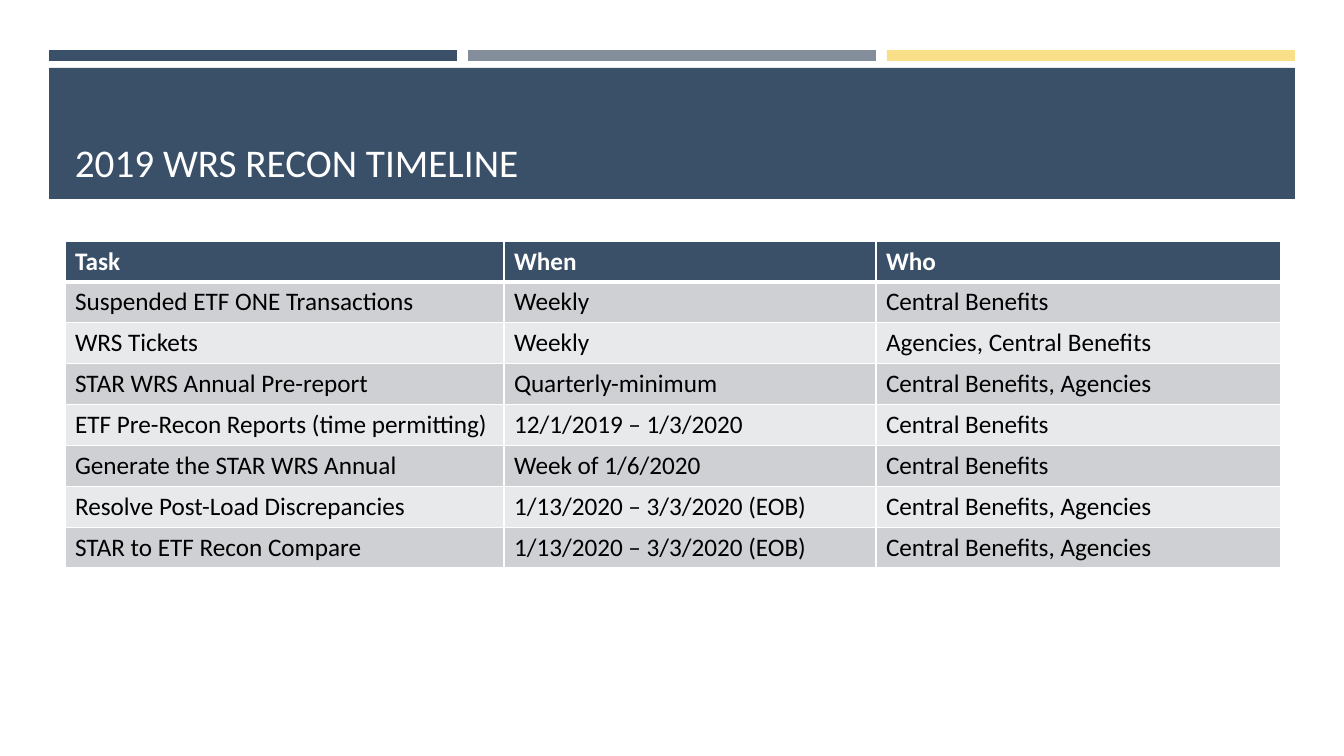
from lxml import etree
from pptx import Presentation
from pptx.dml.color import RGBColor
from pptx.enum import shapes, text
from pptx.oxml.ns import qn
from pptx.util import Emu, Pt

TITLE = "2019 WRS RECON TIMELINE"
ROWS = [
    ("Task", "When", "Who"),
    ("Suspended ETF ONE Transactions", "Weekly", "Central Benefits"),
    ("WRS Tickets", "Weekly", "Agencies, Central Benefits"),
    ("STAR WRS Annual Pre-report", "Quarterly-minimum", "Central Benefits, Agencies"),
    ("ETF Pre-Recon Reports (time permitting)", "12/1/2019 – 1/3/2020", "Central Benefits"),
    ("Generate the STAR WRS Annual", "Week of 1/6/2020", "Central Benefits"),
    ("Resolve Post-Load Discrepancies", "1/13/2020 – 3/3/2020 (EOB)", "Central Benefits, Agencies"),
    ("STAR to ETF Recon Compare", "1/13/2020 – 3/3/2020 (EOB)", "Central Benefits, Agencies"),
]
COLS = (439, 372, 405)
TABLE_H = 327

NAVY = RGBColor(0x3A, 0x50, 0x68)
SLATE = RGBColor(0x84, 0x8D, 0x9A)
GOLD = RGBColor(0xF8, 0xDF, 0x88)
DARK = RGBColor(0xCE, 0xD0, 0xD4)
LIGHT = RGBColor(0xE8, 0xE9, 0xEB)
WHITE = RGBColor(0xFF, 0xFF, 0xFF)
BLACK = RGBColor(0, 0, 0)
FONT = "Calibri"


def px(n):
    return Emu(round(n * 914400 / 100.8))


def block(slide, x, y, w, h, color):
    shape = slide.shapes.add_shape(shapes.MSO_SHAPE.RECTANGLE, px(x), px(y), px(w), px(h))
    shape.shadow.inherit = False
    shape.fill.solid()
    shape.fill.fore_color.rgb = color
    shape.line.fill.background()
    return shape


def style(para, size, color, bold=False):
    font = para.font
    font.name, font.size, font.bold = FONT, Pt(size), bold
    font.color.rgb = color


def edge(cell, side, width):
    """Draw one white border; call before the cell is filled."""
    line = etree.SubElement(cell._tc.get_or_add_tcPr(), qn("a:ln" + side), w=str(Pt(width)))
    fill = etree.SubElement(line, qn("a:solidFill"))
    etree.SubElement(fill, qn("a:srgbClr"), val=str(WHITE))


def header(slide):
    for i, color in enumerate((NAVY, SLATE, GOLD)):
        block(slide, 49 + 419 * i, 50, 408, 11, color)
    block(slide, 49, 68, 1246, 131, NAVY)
    title = block(slide, 65, 78, 1215, 112, NAVY)
    frame = title.text_frame
    frame.word_wrap = True
    frame.vertical_anchor = text.MSO_ANCHOR.BOTTOM
    para = frame.paragraphs[0]
    para.text = TITLE
    para.alignment = text.PP_ALIGN.LEFT
    style(para, 28, WHITE)


def timeline(slide):
    frame = slide.shapes.add_table(len(ROWS), len(COLS), px(65), px(241), px(sum(COLS)), px(TABLE_H))
    table = frame.table
    for col, width in zip(table.columns, COLS):
        col.width = px(width)
    for r, row in enumerate(ROWS):
        table.rows[r].height = px(TABLE_H / len(ROWS))
        head = r == 0
        back = NAVY if head else DARK if r % 2 else LIGHT
        for c, words in enumerate(row):
            cell = table.cell(r, c)
            for side in "LRTB":
                thick = (head and side == "B") or (r == 1 and side == "T")
                edge(cell, side, 3 if thick else 1)
            cell.fill.solid()
            cell.fill.fore_color.rgb = back
            para = cell.text_frame.paragraphs[0]
            para.text = words
            style(para, 18, WHITE if head else BLACK, head)


def main():
    deck = Presentation()
    deck.slide_width, deck.slide_height = px(1344), px(756)
    slide = deck.slides.add_slide(deck.slide_layouts[6])
    header(slide)
    timeline(slide)
    deck.save("out.pptx")


if __name__ == "__main__":
    main()
